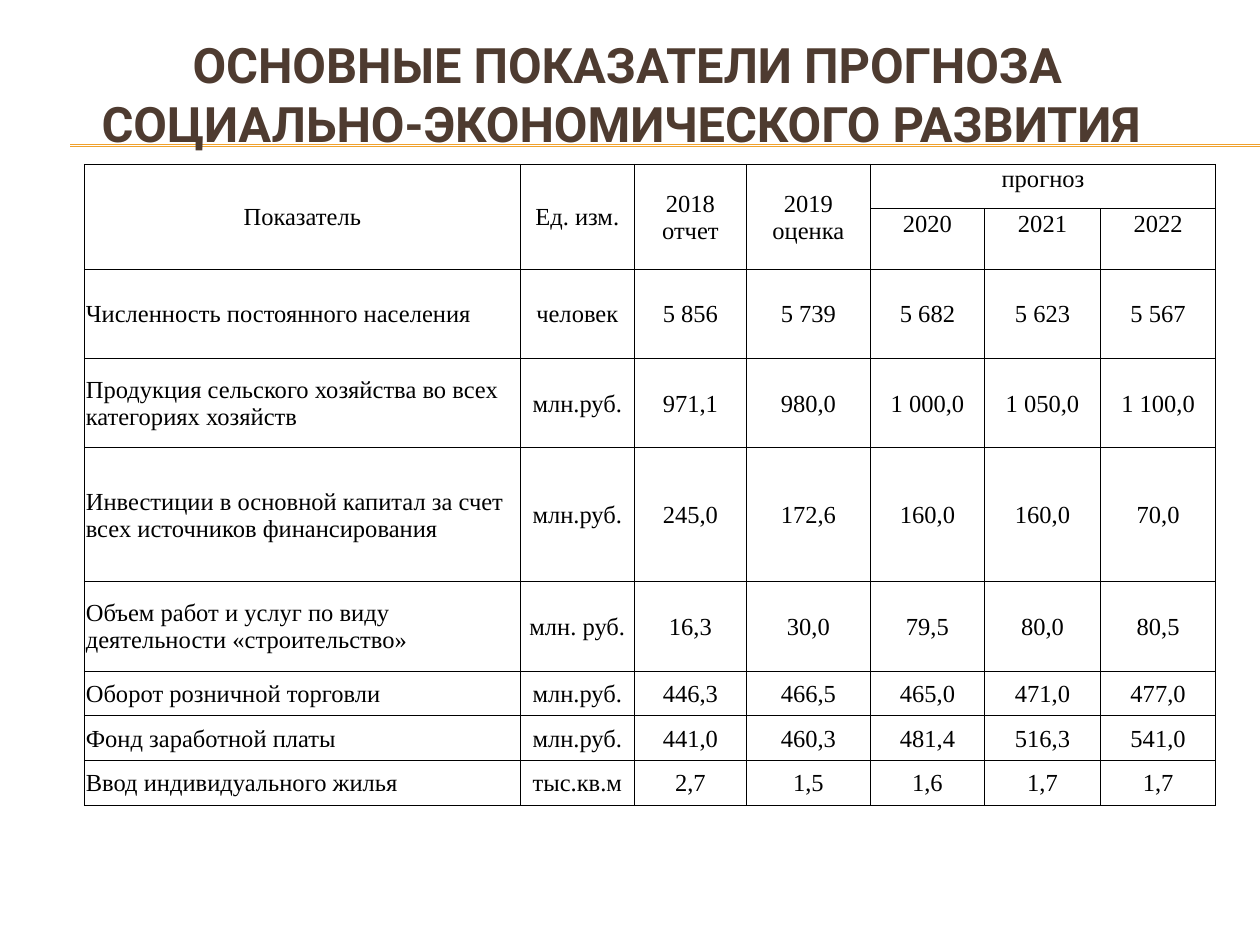
"""Build a slide with the main indicators of the socio-economic forecast."""
from lxml.etree import SubElement
from pptx import Presentation
from pptx.dml.color import RGBColor
from pptx.enum.shapes import MSO_CONNECTOR
from pptx.enum.text import MSO_ANCHOR, PP_ALIGN
from pptx.oxml.ns import qn
from pptx.util import Cm, Pt

THEME = {
    "title_font": "Roboto", "title_size": Pt(27.9), "title_color": "4E3B30",
    "table_font": "Times New Roman", "table_size": Pt(14), "table_color": "000000",
    "rule_color": "F0A22E", "rule_width": Pt(0.75), "border_width": Pt(0.5),
}
TITLE = "ОСНОВНЫЕ ПОКАЗАТЕЛИ ПРОГНОЗА СОЦИАЛЬНО-ЭКОНОМИЧЕСКОГО РАЗВИТИЯ "
ROWS = [
    ("Показатель", "Ед. изм.", "2018 отчет", "2019 оценка", "прогноз", "", ""),
    ("", "", "", "", "2020", "2021", "2022"),
    ("Численность постоянного населения", "человек",
     "5 856", "5 739", "5 682", "5 623", "5 567"),
    ("Продукция сельского хозяйства во всех категориях хозяйств", "млн.руб.",
     "971,1", "980,0", "1 000,0", "1 050,0", "1 100,0"),
    ("Инвестиции в основной капитал за счет всех источников финансирования", "млн.руб.",
     "245,0", "172,6", "160,0", "160,0", "70,0"),
    ("Объем работ и услуг по виду деятельности «строительство»", "млн. руб.",
     "16,3", "30,0", "79,5", "80,0", "80,5"),
    ("Оборот розничной торговли", "млн.руб.", "446,3", "466,5", "465,0", "471,0", "477,0"),
    ("Фонд заработной платы", "млн.руб.", "441,0", "460,3", "481,4", "516,3", "541,0"),
    ("Ввод индивидуального жилья", "тыс.кв.м", "2,7", "1,5", "1,6", "1,7", "1,7"),
]
COL_WIDTHS = [8.79, 2.3, 2.26, 2.5, 2.3, 2.34, 2.32]
ROW_HEIGHTS = [0.9, 1.13, 1.8, 1.8, 2.7, 1.8, 0.9, 0.9, 0.9]
MERGES = [((0, c), (1, c)) for c in range(4)] + [((0, 4), (0, 6))]
RULES_Y = [2.92, 2.95]


def style_text(p, kind, align, bold=False):
    """Apply one theme text style to the runs of a paragraph."""
    p.alignment = align
    for r in p.runs:
        r.font.name = THEME[f"{kind}_font"]
        r.font.size = THEME[f"{kind}_size"]
        r.font.bold = bold
        r.font.color.rgb = RGBColor.from_string(THEME[f"{kind}_color"])


def add_rule(s, y):
    """Draw one thin line running to the right edge."""
    line = s.shapes.add_connector(MSO_CONNECTOR.STRAIGHT, Cm(1.42), Cm(y), Cm(25.4), Cm(y))
    line.line.color.rgb = RGBColor.from_string(THEME["rule_color"])
    line.line.width = THEME["rule_width"]
    SubElement(line._element.spPr, qn("a:effectLst"))


def add_title(s):
    """Add the two-line heading."""
    sp = s.shapes.add_textbox(Cm(0.58), Cm(0.71), Cm(24.13), Cm(2.34))
    tf = sp.text_frame
    tf.word_wrap = True
    tf.vertical_anchor = MSO_ANCHOR.MIDDLE
    tf.text = TITLE
    style_text(tf.paragraphs[0], "title", PP_ALIGN.CENTER, True)


def border_cell(cell):
    """Give a cell thin borders on all sides and no fill."""
    tc_pr = cell._tc.get_or_add_tcPr()
    for side in ("lnL", "lnR", "lnT", "lnB"):
        ln = SubElement(tc_pr, qn(f"a:{side}"), w=str(int(THEME["border_width"])))
        fill = SubElement(ln, qn("a:solidFill"))
        SubElement(fill, qn("a:srgbClr"), val=THEME["table_color"])
    cell.fill.background()


def add_indicators(s):
    """Add the indicator table with its merged header."""
    frame = s.shapes.add_table(len(ROWS), len(COL_WIDTHS), Cm(1.7), Cm(3.31),
                               Cm(sum(COL_WIDTHS)), Cm(sum(ROW_HEIGHTS)))
    table = frame.table
    table.first_row = table.horz_banding = False
    for col, width in zip(table.columns, COL_WIDTHS):
        col.width = Cm(width)
    for row, height in zip(table.rows, ROW_HEIGHTS):
        row.height = Cm(height)
    for i, values in enumerate(ROWS):
        for j, value in enumerate(values):
            cell = table.cell(i, j)
            cell.margin_left = cell.margin_right = cell.margin_top = Cm(0.03)
            cell.margin_bottom = 0
            forecast_head = i < 2 and j > 3
            cell.vertical_anchor = MSO_ANCHOR.TOP if forecast_head else MSO_ANCHOR.MIDDLE
            border_cell(cell)
            p = cell.text_frame.paragraphs[0]
            p.text = value
            style_text(p, "table", PP_ALIGN.LEFT if i > 1 and j == 0 else PP_ALIGN.CENTER)
    for first, last in MERGES:
        table.cell(*first).merge(table.cell(*last))


def main():
    """Assemble and save the slide."""
    prs = Presentation()
    prs.slide_width, prs.slide_height = Cm(25.4), Cm(19.05)
    s = prs.slides.add_slide(prs.slide_layouts[6])
    for y in RULES_Y:
        add_rule(s, y)
    add_title(s)
    add_indicators(s)
    prs.save("out.pptx")


if __name__ == "__main__":
    main()
